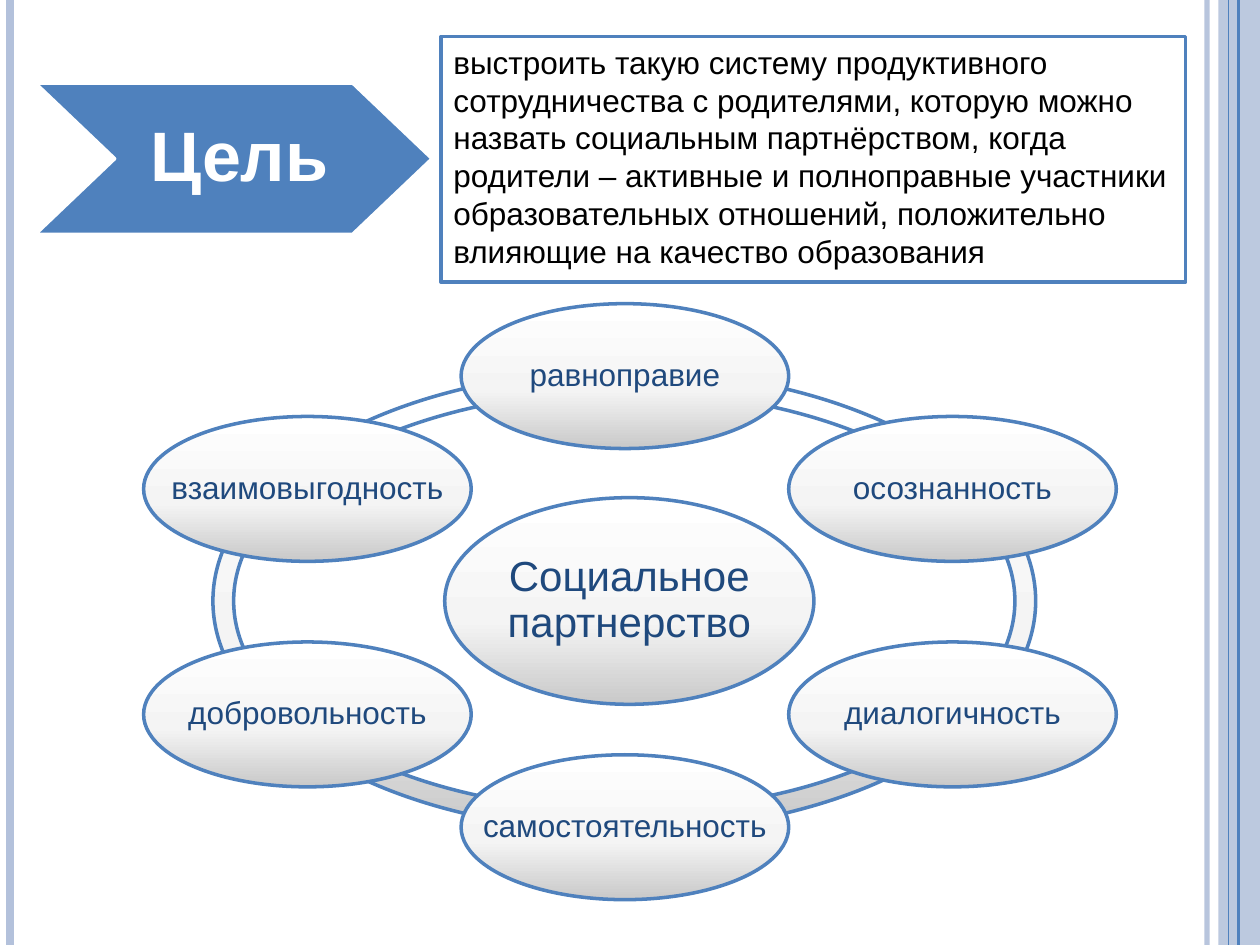
from copy import deepcopy

from pptx import Presentation
from pptx.dml.color import RGBColor
from pptx.enum.shapes import MSO_CONNECTOR, MSO_SHAPE
from pptx.enum.text import MSO_ANCHOR as ANCHOR, PP_ALIGN as ALIGN
from pptx.oxml.ns import qn
from pptx.util import Inches, Pt

WHITE = RGBColor(0xFF, 0xFF, 0xFF)
BLACK = RGBColor(0x00, 0x00, 0x00)
BLUE = RGBColor(0x4F, 0x81, 0xBD)
PALE_BLUE = RGBColor(0xB3, 0xC1, 0xDB)
NAVY = RGBColor(0x1F, 0x49, 0x7D)
GREY = RGBColor(0xC9, 0xC9, 0xC9)
LIGHT_GREY = RGBColor(0xF4, 0xF4, 0xF4)

GOAL = (
    "выстроить такую систему продуктивного сотрудничества с родителями, "
    "которую можно назвать социальным партнёрством, когда родители – активные "
    "и полноправные участники образовательных отношений, положительно "
    "влияющие на качество образования"
)
STRIPES = [
    (9.58, PALE_BLUE, 3, 93),
    (0.08, PALE_BLUE, 4.5, 100),
    (9.83, BLUE, 1.5, 100),
    (9.75, BLUE, 0.75, 100),
]
LEFT, MIDDLE, RIGHT = 1.14, 3.66, 6.26
PRINCIPLES = [
    ("равноправие", MIDDLE, 0),
    ("осознанность", RIGHT, 1),
    ("диалогичность", RIGHT, 3),
    ("самостоятельность", MIDDLE, 4),
    ("добровольность", LEFT, 3),
    ("взаимовыгодность", LEFT, 1),
]
FIRST_ROW, ROW_STEP = 2.41, 0.895
RING_ARCS = [(126, 162), (90, 126), (54, 90), (18, 54), (198, 18), (162, 198)]


def write(shape, text, size, color, bold=False, align=ALIGN.CENTER,
          anchor=ANCHOR.MIDDLE, insets=(0, 0, 0, 0), spacing=0.9, wrap=True):
    frame = shape.text_frame
    frame.word_wrap = wrap
    frame.vertical_anchor = anchor
    (frame.margin_left, frame.margin_top,
     frame.margin_right, frame.margin_bottom) = map(Inches, insets)
    paragraph = frame.paragraphs[0]
    paragraph.alignment = align
    paragraph.line_spacing = spacing
    run = paragraph.add_run()
    run.text = text
    run.font.name = "Arial"
    run.font.size = Pt(size)
    run.font.bold = bold
    run.font.color.rgb = color


def set_opacity(element, percent):
    color = element.find(".//" + qn("a:srgbClr"))
    alpha = color.makeelement(qn("a:alpha"), {"val": str(percent * 1000)})
    color.append(alpha)


def add_outlined(slide, kind, box, fill=None, line=BLUE):
    shape = slide.shapes.add_shape(kind, *map(Inches, box))
    shape.shadow.inherit = False
    if fill:
        shape.fill.solid()
        shape.fill.fore_color.rgb = fill
    if line:
        shape.line.color.rgb = line
        shape.line.width = Pt(2)
    else:
        shape.line.fill.background()
    return shape


def add_shaded(slide, kind, box):
    shape = add_outlined(slide, kind, box)
    shape.fill.gradient()
    shape.fill.gradient_angle = 90
    stop_list = shape.element.spPr.find(".//" + qn("a:gsLst"))
    stop_list.append(deepcopy(stop_list[0]))
    shades = [(0, GREY), (0.4, LIGHT_GREY), (1, WHITE)]
    for stop, (position, color) in zip(shape.fill.gradient_stops, shades):
        stop.position = position
        stop.color.rgb = color
    return shape


def add_stripe(slide, x, color, width, opacity):
    stripe = slide.shapes.add_connector(
        MSO_CONNECTOR.STRAIGHT, Inches(x), 0, Inches(x), Inches(7.5))
    stripe.line.color.rgb = color
    stripe.line.width = Pt(width)
    properties = stripe._element.spPr
    if opacity < 100:
        set_opacity(properties, opacity)
    properties.append(properties.makeelement(qn("a:effectLst"), {}))


def add_side_band(slide):
    band = add_outlined(slide, MSO_SHAPE.RECTANGLE, (9.67, 0, 0.33, 7.5),
                        PALE_BLUE, None)
    set_opacity(band.element.spPr, 87)


def add_heading(slide):
    box = (0.28, 0.66, 3.15, 1.2)
    arrow = add_outlined(slide, MSO_SHAPE.CHEVRON, box, BLUE, WHITE)
    arrow.adjustments[0] = 0.525
    title = slide.shapes.title
    title.left, title.top, title.width, title.height = map(Inches, box)
    arrow.element.addnext(title.element)
    write(title, "Цель", 40, WHITE, bold=True, insets=(0.87, 0.05, 0.78, 0.05))


def add_goal(slide):
    goal = add_outlined(slide, MSO_SHAPE.RECTANGLE, (3.5, 0.29, 5.91, 1.95), WHITE)
    write(goal, GOAL, 18, BLACK, align=ALIGN.LEFT, anchor=ANCHOR.TOP,
          insets=(0.1, 0.05, 0.1, 0.05), spacing=1.0)


def add_partnership_ring(slide):
    for start, end in RING_ARCS:
        arc = add_shaded(slide, MSO_SHAPE.BLOCK_ARC, (1.69, 2.94, 6.53, 3.66))
        arc.adjustments[0] = start * 0.6
        arc.adjustments[1] = end * 0.6
        arc.adjustments[2] = 0.045
    center = add_shaded(slide, MSO_SHAPE.OVAL, (3.53, 3.95, 2.93, 1.64))
    write(center, "Социальное партнерство", 24, NAVY)
    for principle, left, row in PRINCIPLES:
        top = FIRST_ROW + row * ROW_STEP
        node = add_shaded(slide, MSO_SHAPE.OVAL, (left, top, 2.6, 1.15))
        write(node, principle, 18, NAVY, wrap=False)


def main():
    presentation = Presentation()
    presentation.slide_width = Inches(10)
    presentation.slide_height = Inches(7.5)
    slide = presentation.slides.add_slide(presentation.slide_layouts[5])
    add_side_band(slide)
    for stripe in STRIPES:
        add_stripe(slide, *stripe)
    add_goal(slide)
    add_heading(slide)
    add_partnership_ring(slide)
    presentation.save("out.pptx")


if __name__ == "__main__":
    main()
